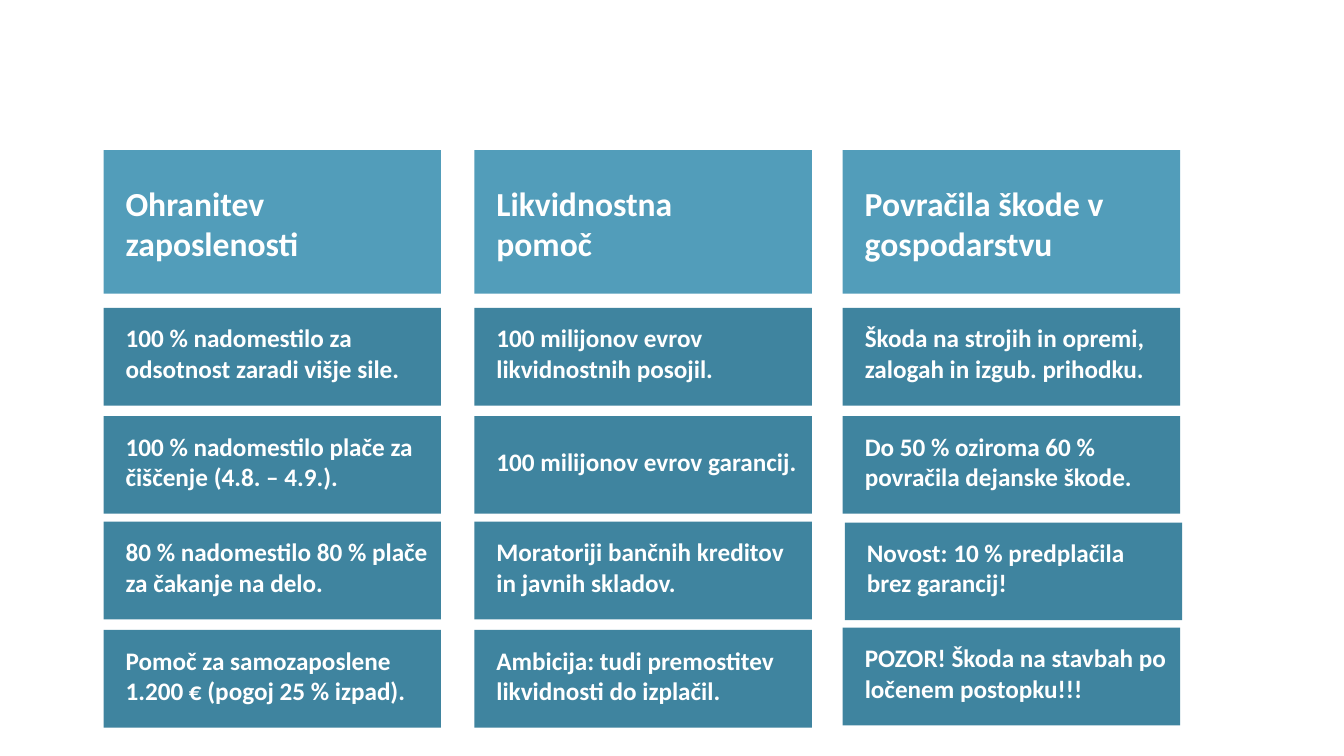
from pptx import Presentation
from pptx.dml.color import RGBColor as RGB
from pptx.enum.shapes import MSO_SHAPE as Shape
from pptx.enum.text import MSO_ANCHOR as Anchor
from pptx.util import Pt

COLUMNS = [
    ("Ohranitev zaposlenosti", [
        "100 % nadomestilo za odsotnost zaradi višje sile.",
        "100 % nadomestilo plače za čiščenje (4.8. – 4.9.).",
        "80 % nadomestilo 80 % plače za čakanje na delo.",
        "Pomoč za samozaposlene 1.200 € (pogoj 25 % izpad).",
    ]),
    ("Likvidnostna pomoč", [
        "100 milijonov evrov likvidnostnih posojil.",
        "100 milijonov evrov garancij.",
        "Moratoriji bančnih kreditov in javnih skladov.",
        "Ambicija: tudi premostitev likvidnosti do izplačil.",
    ]),
    ("Povračila škode v gospodarstvu", [
        "Škoda na strojih in opremi, zalogah in izgub. prihodku.",
        "Do 50 % oziroma 60 % povračila dejanske škode.",
        "Novost: 10 % predplačila brez garancij!",
        "POZOR! Škoda na stavbah po ločenem postopku!!!",
    ]),
]
COLORS = {"head": "529DBA", "item": "3F849F", "text": "FFFFFF"}
FONT = "Calibri"

LEFTS = [74, 338.9, 602]
TOPS = [219.9, 297.2, 372.7, 450]
HEAD_TOP = 107.2
WIDTH = 241
INSET = 8.6
# Height of the block, then offset, width and height of its text, and font size
STYLES = {
    "head": (102.6, 15.2, 198.7, 73.4, 24),
    "item": (69.8, 7.4, 232.4, 49.7, 18),
}
# Small shifts (x, y) of single items, by column and row
SHIFTS = {(2, 2): (1.5, 0.6), (2, 3): (0, -1.6)}


def add_block(slide, kind, x, y, text):
    """Draw a filled block with its label in a text box on top."""
    height, drop, text_w, text_h, size = STYLES[kind]
    block = slide.shapes.add_shape(
        Shape.RECTANGLE, Pt(x), Pt(y), Pt(WIDTH), Pt(height))
    block.shadow.inherit = False
    block.fill.solid()
    block.fill.fore_color.rgb = RGB.from_string(COLORS[kind])
    block.line.fill.background()

    box = slide.shapes.add_textbox(
        Pt(x + INSET), Pt(y + drop), Pt(text_w), Pt(text_h))
    frame = box.text_frame
    frame.word_wrap = True
    frame.vertical_anchor = Anchor.MIDDLE
    label = frame.paragraphs[0]
    label.text = text
    font = label.font
    font.name, font.size, font.bold = FONT, Pt(size), True
    font.color.rgb = RGB.from_string(COLORS["text"])


def main():
    deck = Presentation()
    deck.slide_width, deck.slide_height = Pt(960), Pt(540)
    slide = deck.slides.add_slide(deck.slide_layouts[6])
    for col, (x, (title, items)) in enumerate(zip(LEFTS, COLUMNS)):
        add_block(slide, "head", x, HEAD_TOP, title)
        for row, (y, text) in enumerate(zip(TOPS, items)):
            dx, dy = SHIFTS.get((col, row), (0, 0))
            add_block(slide, "item", x + dx, y + dy, text)
    deck.save("out.pptx")


if __name__ == "__main__":
    main()
